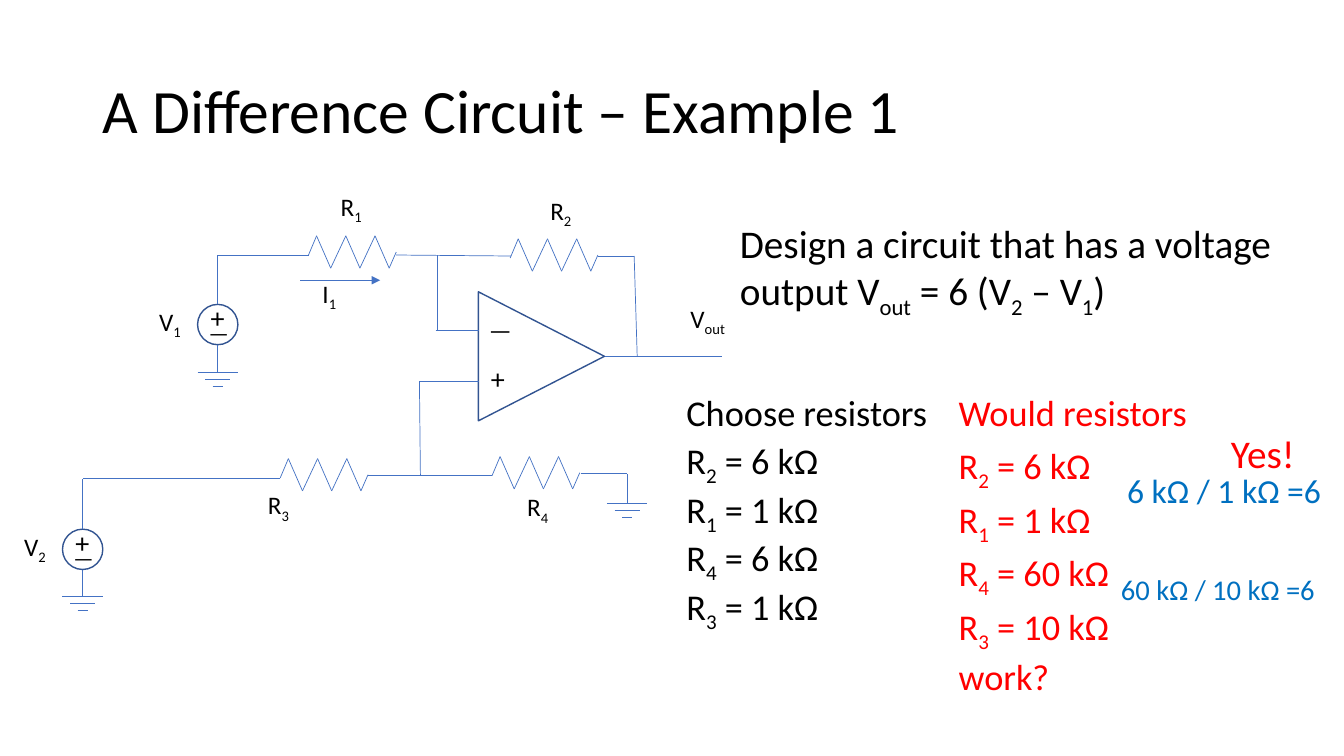
from lxml import etree
from pptx import Presentation, util as u
from pptx.dml.color import RGBColor
from pptx.enum import shapes, text
from pptx.oxml.ns import qn

COLORS = {"ink": "000000", "wire": "4472C4", "edge": "325491",
          "question": "FF0000", "check": "0070C0"}
CELL = u.Inches(1)
COLS, ROWS = 13.33, 7.5

TITLE = "A Difference Circuit – Example 1"
BLOCKS = [
    (["Design a circuit that has a voltage output V{out} = 6 (V{2} – V{1})"],
     (7.24, 2.18, 5.89, 1.13), 28, "ink", 0.9),
    (["Choose resistors", "R{2} = 6 kΩ", "R{1} = 1 kΩ", "R{4} = 6 kΩ", "R{3} = 1 kΩ"],
     (6.71, 3.94, 2.7, 2.32), 25.9, "ink", 0.7),
    (["Would resistors", "R{2} = 6 kΩ", "R{1} = 1 kΩ", "R{4} = 60 kΩ",
      "R{3} = 10 kΩ", "work?"],
     (9.41, 3.91, 2.7, 2.93), 25.9, "question", 0.8),
    (["Yes!"], (12.11, 4.26, 0.92, 0.63), 28, "question", 0.9),
    (["6 kΩ / 1 kΩ =6"], (11.08, 4.66, 2.23, 0.49), 24, "check", 0.9),
    (["60 kΩ / 10 kΩ =6"], (11.02, 5.69, 2.23, 0.49), 20.4, "check", 0.8),
]
LABELS = [("V{out}", 6.75, 2.96), ("R{2}", 5.36, 1.89), ("R{1}", 3.28, 1.85),
          ("R{3}", 2.56, 4.81), ("R{4}", 5.13, 4.83), ("I{1}", 3.1, 2.71)]
RESISTORS = [(3.06, 2.53), (5.06, 2.56), (2.78, 4.74), (4.88, 4.72)]
ZIGZAG = [(0, 0), (0.08, -0.19), (0.22, 0.13), (0.37, -0.19),
          (0.51, 0.13), (0.66, -0.19), (0.8, 0.13), (0.87, -0.03)]
SOURCES = [("V{1}", 2.16, 3.22, 2.53), ("V{2}", 0.82, 5.45, 4.75)]
RADIUS = 0.2
GROUND_BARS = [0.2, 0.125, 0.05]
GROUND_STEP = 0.07
WIRES = [
    [(4.32, 3.28), (4.75, 3.28)],
    [(4.75, 3.78), (4.16, 3.78), (4.17, 4.72)],
    [(6, 3.54), (7.16, 3.54)],
    [(3.93, 2.53), (5.07, 2.54)],
    [(4.34, 3.28), (4.34, 2.53)],
    [(3.06, 2.53), (2.16, 2.53)],
    [(6.32, 3.53), (6.29, 2.54), (5.93, 2.54)],
    [(2.78, 4.75), (0.82, 4.75)],
    [(4.88, 4.72), (3.65, 4.72)],
    [(5.76, 4.7), (6.22, 4.7), (6.22, 4.99)],
]
CURRENT = [(2.98, 2.78), (3.77, 2.78)]

prs = Presentation()
prs.slide_width, prs.slide_height = u.Inches(COLS), u.Inches(ROWS)
s = prs.slides.add_slide(prs.slide_layouts[6])


def grid(*cells):
    return [round(c * CELL) for c in cells]


def write(lines, box, size=18, color="ink", spacing=1, before=0,
          anchor=text.MSO_ANCHOR.TOP):
    tf = s.shapes.add_textbox(*grid(*box)).text_frame
    tf.word_wrap = True
    tf.vertical_anchor = anchor
    for i, line in enumerate(lines):
        p = tf.add_paragraph() if i else tf.paragraphs[0]
        p.line_spacing, p.space_before = spacing, u.Pt(before)
        for j, part in enumerate(line.replace("}", "{").split("{")):
            if not part:
                continue
            r = p.add_run()
            r.text = part
            r.font.name, r.font.size = "Calibri", u.Pt(size)
            r.font.color.rgb = RGBColor.from_string(COLORS[color])
            if j % 2:
                r.font._element.set("baseline", "-25000")


def wire(points, arrow=False):
    for start, end in zip(points, points[1:]):
        c = s.shapes.add_connector(shapes.MSO_CONNECTOR.STRAIGHT, *grid(*start, *end))
        c.line.color.rgb = RGBColor.from_string(COLORS["wire"])
        c.line.width = u.Pt(0.5)
        if arrow:
            etree.SubElement(c.line._get_or_add_ln(), qn("a:tailEnd"), type="triangle")
        etree.SubElement(c._element.spPr, qn("a:effectLst"))


def outline(kind, box, rotation=0):
    sp = s.shapes.add_shape(kind, *grid(*box))
    sp.rotation = rotation
    sp.shadow.inherit = False
    sp.fill.background()
    sp.line.color.rgb = RGBColor.from_string(COLORS["edge"])
    sp.line.width = u.Pt(1)


def ground(x, y):
    for i, half in enumerate(GROUND_BARS):
        bar = y + i * GROUND_STEP
        wire([(x - half, bar), (x + half, bar)])


def source(name, x, y, top):
    outline(shapes.MSO_SHAPE.OVAL, (x - RADIUS, y - RADIUS, 2 * RADIUS, 2 * RADIUS))
    write(["+"], (x - 0.17, y - 0.29, 0.34, 0.44), size=20)
    write(["—"], (x - 0.19, y - 0.1, 0.34, 0.37), size=16)
    write([name], (x - 0.68, y - 0.23, 0.57, 0.4))
    wire([(x, y - RADIUS), (x, top)])
    wire([(x, y + RADIUS), (x, y + 0.47)])
    ground(x, y + 0.47)


write([TITLE], (0.92, 0.4, 11.5, 1.45), size=44, spacing=0.9,
      anchor=text.MSO_ANCHOR.MIDDLE)
outline(shapes.MSO_SHAPE.ISOSCELES_TRIANGLE, (4.73, 2.91, 1.28, 1.25), rotation=90)
write(["—"], (4.75, 3.07, 0.34, 0.4))
write(["+"], (4.77, 3.54, 0.34, 0.44), size=20)
for points in WIRES:
    wire(points)
for x, y in RESISTORS:
    wire([(x + dx, y + dy) for dx, dy in ZIGZAG])
for part in SOURCES:
    source(*part)
ground(6.22, 4.99)
wire(CURRENT, arrow=True)
for name, x, y in LABELS:
    write([name], (x, y, 0.57, 0.4))
for lines, box, size, color, spacing in BLOCKS:
    write(lines, box, size=size, color=color, spacing=spacing, before=10)

prs.save("out.pptx")
